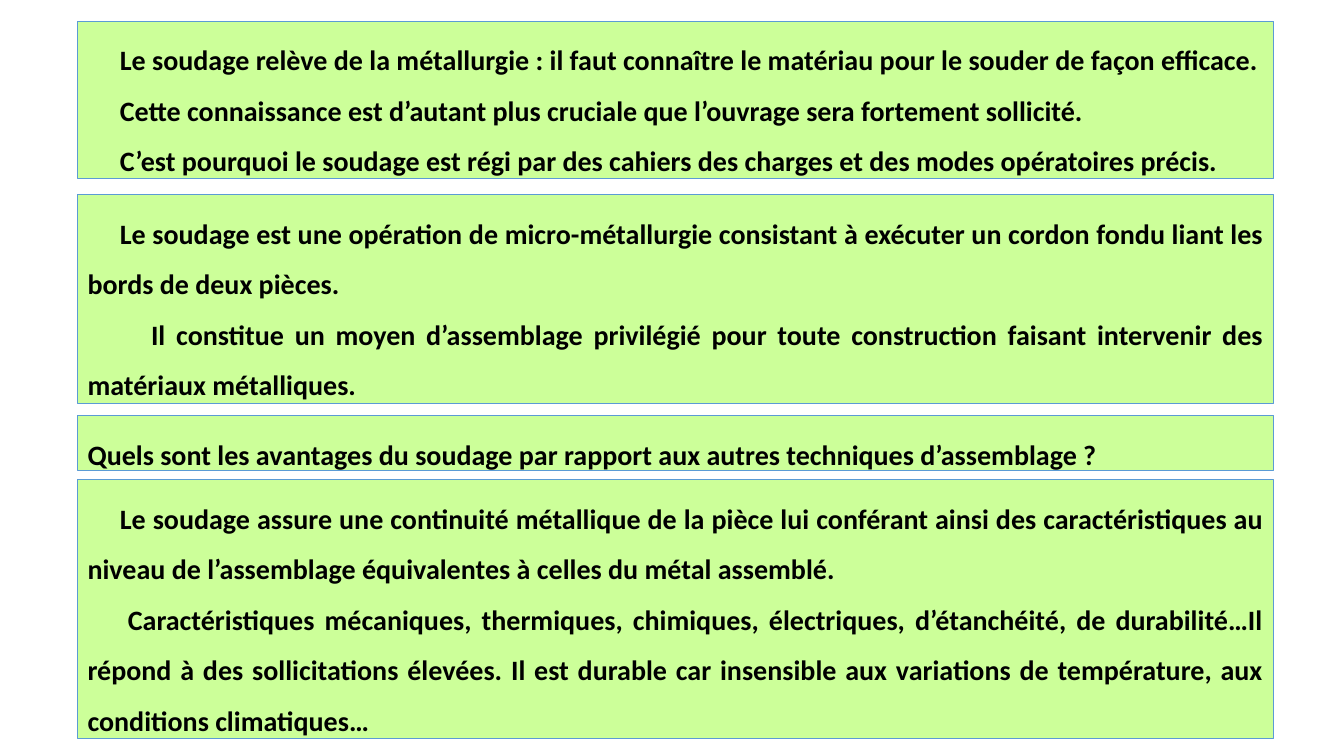
from dataclasses import dataclass

import pptx
import pptx.dml.color
import pptx.enum.shapes
import pptx.enum.text
import pptx.util
from pptx.util import Inches


@dataclass(frozen=True)
class Theme:
    font: str = "Calibri"
    body_size: float = 20
    line_spacing: float = 1.5
    outline_width: float = 0.5
    panel: str = "CCFF99"
    outline: str = "5B9BD5"
    ink: str = "000000"


@dataclass(frozen=True)
class Sentence:
    text: str
    indent: float = 0.32


@dataclass(frozen=True)
class Panel:
    top: float
    height: float
    sentences: tuple[Sentence, ...]


THEME = Theme()
PANEL_LEFT = 0.77
PANEL_WIDTH = 11.86

PANELS = (
    Panel(0.21, 1.56, (
        Sentence("Le soudage relève de la métallurgie : il faut connaître le matériau "
                 "pour le souder de façon efficace."),
        Sentence("Cette connaissance est d’autant plus cruciale que l’ouvrage sera "
                 "fortement sollicité."),
        Sentence("C’est pourquoi le soudage est régi par des cahiers des charges et des "
                 "modes opératoires précis."),
    )),
    Panel(1.93, 2.07, (
        Sentence("Le soudage est une opération de micro-métallurgie consistant à exécuter "
                 "un cordon fondu liant les bords de deux pièces."),
        Sentence("Il constitue un moyen d’assemblage privilégié pour toute construction "
                 "faisant intervenir des matériaux métalliques.", indent=0.63),
    )),
    Panel(4.12, 0.55, (
        Sentence("Quels sont les avantages du soudage par rapport aux autres techniques "
                 "d’assemblage ?", indent=0),
    )),
    Panel(4.76, 2.57, (
        Sentence("Le soudage assure une continuité métallique de la pièce lui conférant "
                 "ainsi des caractéristiques au niveau de l’assemblage équivalentes à "
                 "celles du métal assemblé."),
        Sentence("Caractéristiques mécaniques, thermiques, chimiques, électriques, "
                 "d’étanchéité, de durabilité…Il répond à des sollicitations élevées. "
                 "Il est durable car insensible aux variations de température, aux "
                 "conditions climatiques…", indent=0.4),
    )),
)


def rgb(value: str) -> pptx.dml.color.RGBColor:
    return pptx.dml.color.RGBColor.from_string(value)


def write(paragraph, text: str, *, indent: float = 0, size: float = THEME.body_size,
          color: str = THEME.ink, bold: bool = True) -> None:
    paragraph.alignment = pptx.enum.text.PP_ALIGN.JUSTIFY
    paragraph.line_spacing = THEME.line_spacing
    paragraph._p.get_or_add_pPr().set("indent", str(Inches(indent)))
    run = paragraph.add_run()
    run.text = text
    run.font.name = THEME.font
    run.font.size = pptx.util.Pt(size)
    run.font.bold = bold
    run.font.color.rgb = rgb(color)


def draw_panel(slide, panel: Panel) -> None:
    box = slide.shapes.add_shape(
        pptx.enum.shapes.MSO_SHAPE.RECTANGLE, Inches(PANEL_LEFT), Inches(panel.top),
        Inches(PANEL_WIDTH), Inches(panel.height))
    box.shadow.inherit = False
    box.fill.solid()
    box.fill.fore_color.rgb = rgb(THEME.panel)
    box.line.color.rgb = rgb(THEME.outline)
    box.line.width = pptx.util.Pt(THEME.outline_width)
    frame = box.text_frame
    frame.word_wrap = True
    frame.auto_size = pptx.enum.text.MSO_AUTO_SIZE.SHAPE_TO_FIT_TEXT
    frame.vertical_anchor = pptx.enum.text.MSO_ANCHOR.TOP
    for position, sentence in enumerate(panel.sentences):
        paragraph = frame.add_paragraph() if position else frame.paragraphs[0]
        write(paragraph, sentence.text, indent=sentence.indent)


def main() -> None:
    presentation = pptx.Presentation()
    presentation.slide_width = Inches(13.33)
    presentation.slide_height = Inches(7.5)
    slide = presentation.slides.add_slide(presentation.slide_layouts[6])
    for panel in PANELS:
        draw_panel(slide, panel)
    presentation.save("out.pptx")


if __name__ == "__main__":
    main()
